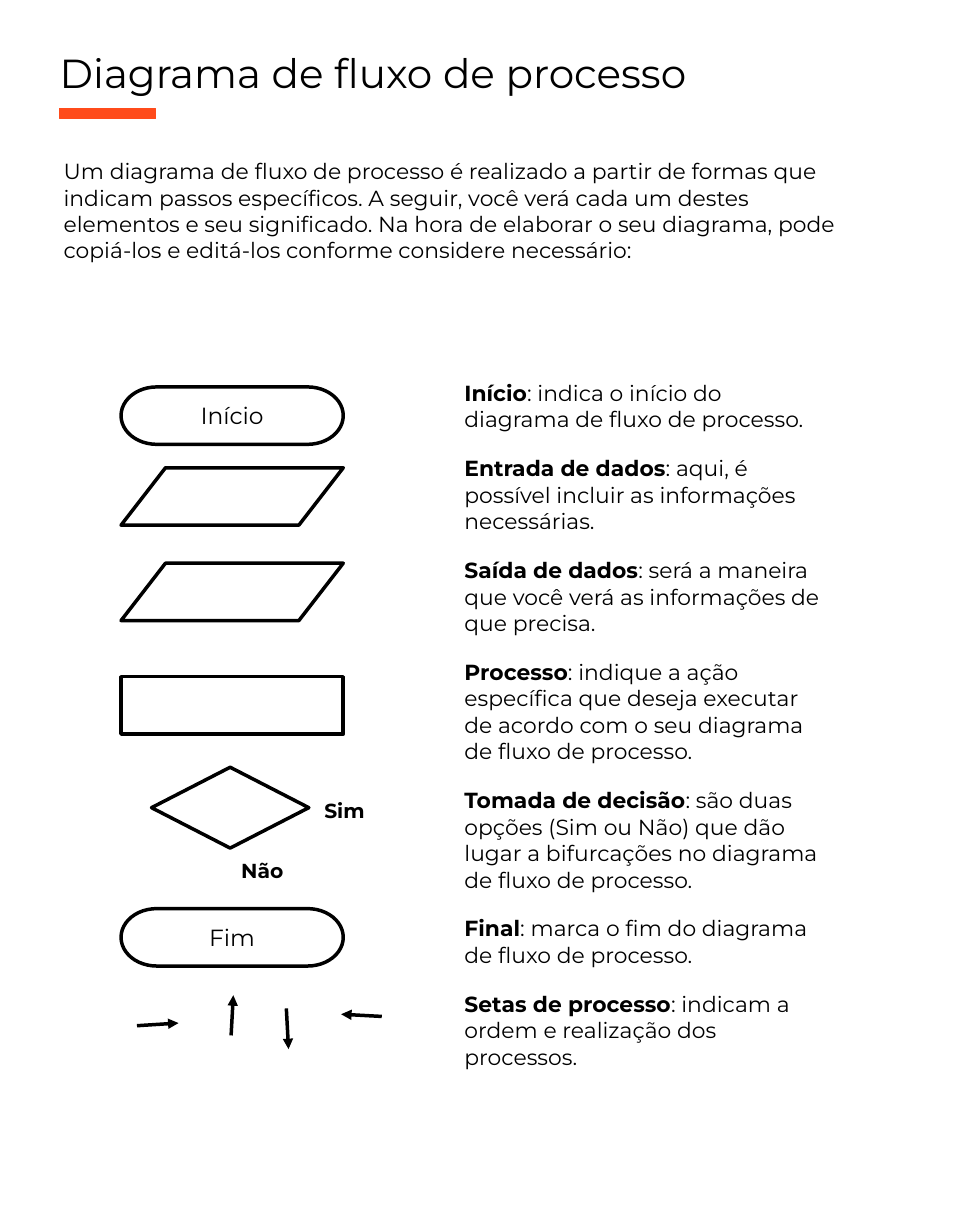
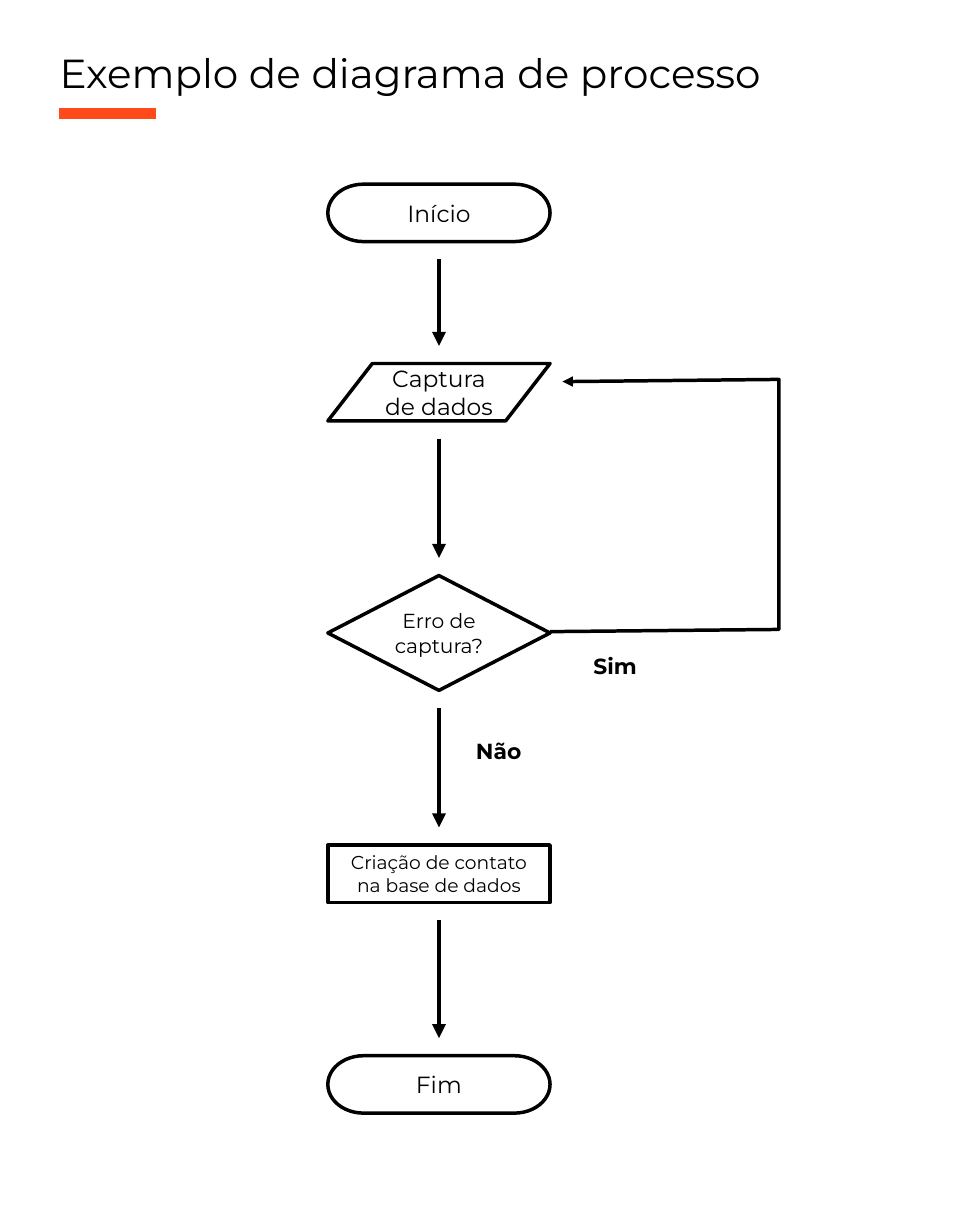
from lxml import etree
from pptx import Presentation
from pptx.dml.color import RGBColor
from pptx.enum import shapes, text
from pptx.oxml import ns
from pptx.util import Cm, Pt

FONT = "Montserrat"
BLACK, WHITE, ORANGE = "000000", "FFFFFF", "FF4B1B"
INSET = 0.25
BLOCK_W, BLOCK_H = 5.03, 1.3
SHAPE = shapes.MSO_SHAPE

SYMBOLS_X = 2.74
SYMBOLS = [
    (SHAPE.FLOWCHART_TERMINATOR, 8.76, "Início"),
    (SHAPE.FLOWCHART_DATA, 10.59, ""),
    (SHAPE.FLOWCHART_DATA, 12.75, ""),
    (SHAPE.RECTANGLE, 15.32, ""),
    (SHAPE.FLOWCHART_TERMINATOR, 20.57, "Fim"),
]
SAMPLE_ARROWS = [
    ((3.1, 23.22), (4.04, 23.16)),
    ((5.23, 23.44), (5.28, 22.53)),
    ((6.48, 22.83), (6.53, 23.75)),
    ((8.64, 23.01), (7.72, 22.96)),
]
# Term, meaning and the number of lines they take
MEANINGS = [
    ("Início", "indica o início do diagrama de fluxo de processo.", 2),
    ("Entrada de dados", "aqui, é possível incluir as informações necessárias.", 3),
    ("Saída de dados", "será a maneira que você verá as informações de que precisa.", 3),
    ("Processo", "indique a ação específica que deseja executar de acordo com o "
     "seu diagrama de fluxo de processo.", 4),
    ("Tomada de decisão", "são duas opções (Sim ou Não) que dão lugar a bifurcações "
     "no diagrama de fluxo de processo.", 4),
    ("Final", "marca o fim do diagrama de fluxo de processo.", 2),
    ("Setas de processo", "indicam a ordem e realização dos processos.", 3),
]
INTRO = ("Um diagrama de fluxo de processo é realizado a partir de formas que indicam "
         "passos específicos. A seguir, você verá cada um destes elementos e seu "
         "significado. Na hora de elaborar o seu diagrama, pode copiá-los e editá-los "
         "conforme considere necessário:")

STEPS_X, STEP_GAP = 7.42, 0.4
# Shape, top, height, text and text size
STEPS = [
    (SHAPE.FLOWCHART_TERMINATOR, 4.17, BLOCK_H, "Início", 15),
    (SHAPE.FLOWCHART_DATA, 8.23, BLOCK_H, "Captura de dados", 15),
    (SHAPE.DIAMOND, 13.03, 2 * BLOCK_H, "Erro de captura?", 13),
    (SHAPE.RECTANGLE, 19.13, BLOCK_H, "Criação de contato na base de dados", 12),
    (SHAPE.FLOWCHART_TERMINATOR, 23.9, BLOCK_H, "Fim", 15),
]
RETURN_PATH = [(12.45, 14.3), (17.63, 14.25), (17.63, 8.59), (12.73, 8.64)]


def rgb(value):
    return RGBColor.from_string(value)


def style_font(p, size, bold=None):
    p.font.name, p.font.size, p.font.bold = FONT, Pt(size), bold
    p.font.color.rgb = rgb(BLACK)


def set_text(tf, words, size, bold=None, align=text.PP_ALIGN.LEFT,
             anchor=text.MSO_ANCHOR.TOP):
    tf.word_wrap = True
    tf.auto_size = text.MSO_AUTO_SIZE.NONE
    tf.vertical_anchor = anchor
    tf.margin_left = tf.margin_right = tf.margin_top = tf.margin_bottom = Cm(INSET)
    p = tf.paragraphs[0]
    p.text, p.alignment = words, align
    style_font(p, size, bold)


def set_line(sp, color, width):
    sp.line.color.rgb = rgb(color)
    sp.line.width = Pt(width)


def add_arrowhead(sp):
    line = sp.line._get_or_add_ln()
    etree.SubElement(line, ns.qn("a:tailEnd"), type="triangle")


def add_title_slide(prs, title):
    """Add a slide with the shared title and the bar under it."""
    s = prs.slides.add_slide(prs.slide_layouts[5])
    sp = s.shapes.title
    sp.left, sp.top, sp.width, sp.height = Cm(1.1), Cm(0.84), Cm(19.66), Cm(1.63)
    set_text(sp.text_frame, title, 26)
    add_block(s, SHAPE.RECTANGLE, 1.35, 2.46, 2.18, 0.23,
              fill=ORANGE, line=ORANGE, weight=0.75)
    return s


def add_block(s, kind, x, y, w=BLOCK_W, h=BLOCK_H, words="", size=15,
              fill=WHITE, line=BLACK, weight=2.25):
    sp = s.shapes.add_shape(kind, Cm(x), Cm(y), Cm(w), Cm(h))
    sp.shadow.inherit = False
    sp.fill.solid()
    sp.fill.fore_color.rgb = rgb(fill)
    set_line(sp, line, weight)
    if words:
        set_text(sp.text_frame, words, size, align=text.PP_ALIGN.CENTER,
                 anchor=text.MSO_ANCHOR.MIDDLE)
    return sp


def add_label(s, x, y, w, h, words, size, bold=None):
    sp = s.shapes.add_textbox(Cm(x), Cm(y), Cm(w), Cm(h))
    set_text(sp.text_frame, words, size, bold)
    return sp


def add_arrow(s, start, end, weight):
    sp = s.shapes.add_connector(shapes.MSO_CONNECTOR.STRAIGHT,
                                *(Cm(v) for v in (*start, *end)))
    set_line(sp, BLACK, weight)
    add_arrowhead(sp)
    etree.SubElement(sp._element.spPr, ns.qn("a:effectLst"))


def add_path_arrow(s, points, weight):
    points = [(Cm(x), Cm(y)) for x, y in points]
    path = s.shapes.build_freeform(*points[0])
    path.add_line_segments(points[1:], close=False)
    sp = path.convert_to_shape()
    sp.shadow.inherit = False
    sp.fill.background()
    set_line(sp, BLACK, weight)
    add_arrowhead(sp)


def add_meanings(s, x, y, column_w):
    """Add the table whose first column is left free for the symbols."""
    heights = [Cm(2 * INSET + 0.59 * lines) for *_, lines in MEANINGS]
    table = s.shapes.add_table(len(MEANINGS), 2, Cm(x), Cm(y),
                               Cm(2 * column_w), sum(heights)).table
    table.first_row = table.horz_banding = False
    for cell in table.iter_cells():
        cell.fill.background()
        cell.margin_left = cell.margin_right = Cm(INSET)
        cell.margin_top = cell.margin_bottom = Cm(INSET)
    for row, height, (term, meaning, _) in zip(table.rows, heights, MEANINGS):
        row.height = height
        p = row.cells[1].text_frame.paragraphs[0]
        for words, bold in ((term, True), (": " + meaning, False)):
            r = p.add_run()
            r.text, r.font.bold = words, bold
        style_font(p, 14)


def build_legend(prs):
    s = add_title_slide(prs, "Diagrama de fluxo de processo")
    add_label(s, 1.19, 3.33, 18.11, 2.9, INTRO, 14)
    add_meanings(s, 1.45, 8.36, 8.81)
    for start, end in SAMPLE_ARROWS:
        add_arrow(s, start, end, 2.25)
    for kind, y, words in SYMBOLS:
        add_block(s, kind, SYMBOLS_X, y, words=words)
    s.shapes.add_group_shape([
        add_block(s, SHAPE.DIAMOND, 3.43, 17.37, 3.56, 1.83),
        add_label(s, 7.09, 17.83, 1.55, 0.79, "Sim", 13, True),
        add_label(s, 5.21, 19.18, 1.78, 0.79, "Não", 13, True),
    ])


def build_example(prs):
    s = add_title_slide(prs, "Exemplo de diagrama de processo")
    for kind, y, h, words, size in STEPS:
        add_block(s, kind, STEPS_X, y, h=h, words=words, size=size)
    center = STEPS_X + BLOCK_W / 2
    for (_, y, h, *_), (_, next_y, *_) in zip(STEPS, STEPS[1:]):
        add_arrow(s, (center, y + h + STEP_GAP), (center, next_y - STEP_GAP), 3)
    add_label(s, 13.18, 14.53, 1.7, 1.12, "Sim", 14, True)
    add_label(s, 10.52, 16.46, 1.7, 1.12, "Não", 14, True)
    add_path_arrow(s, RETURN_PATH, 2.25)


def main():
    prs = Presentation()
    prs.slide_width, prs.slide_height = Cm(21.59), Cm(27.89)
    build_legend(prs)
    build_example(prs)
    prs.save("out.pptx")


if __name__ == "__main__":
    main()
